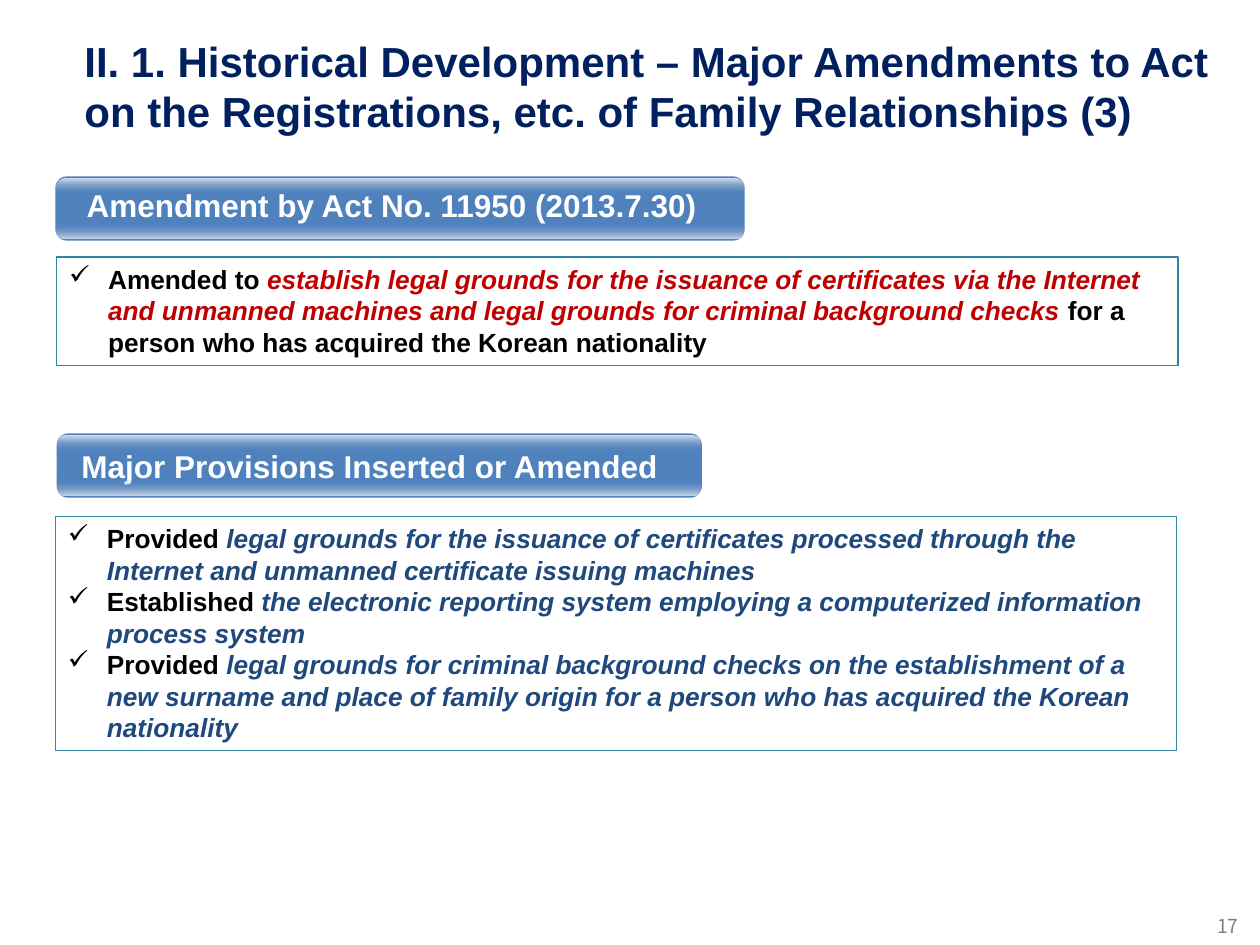
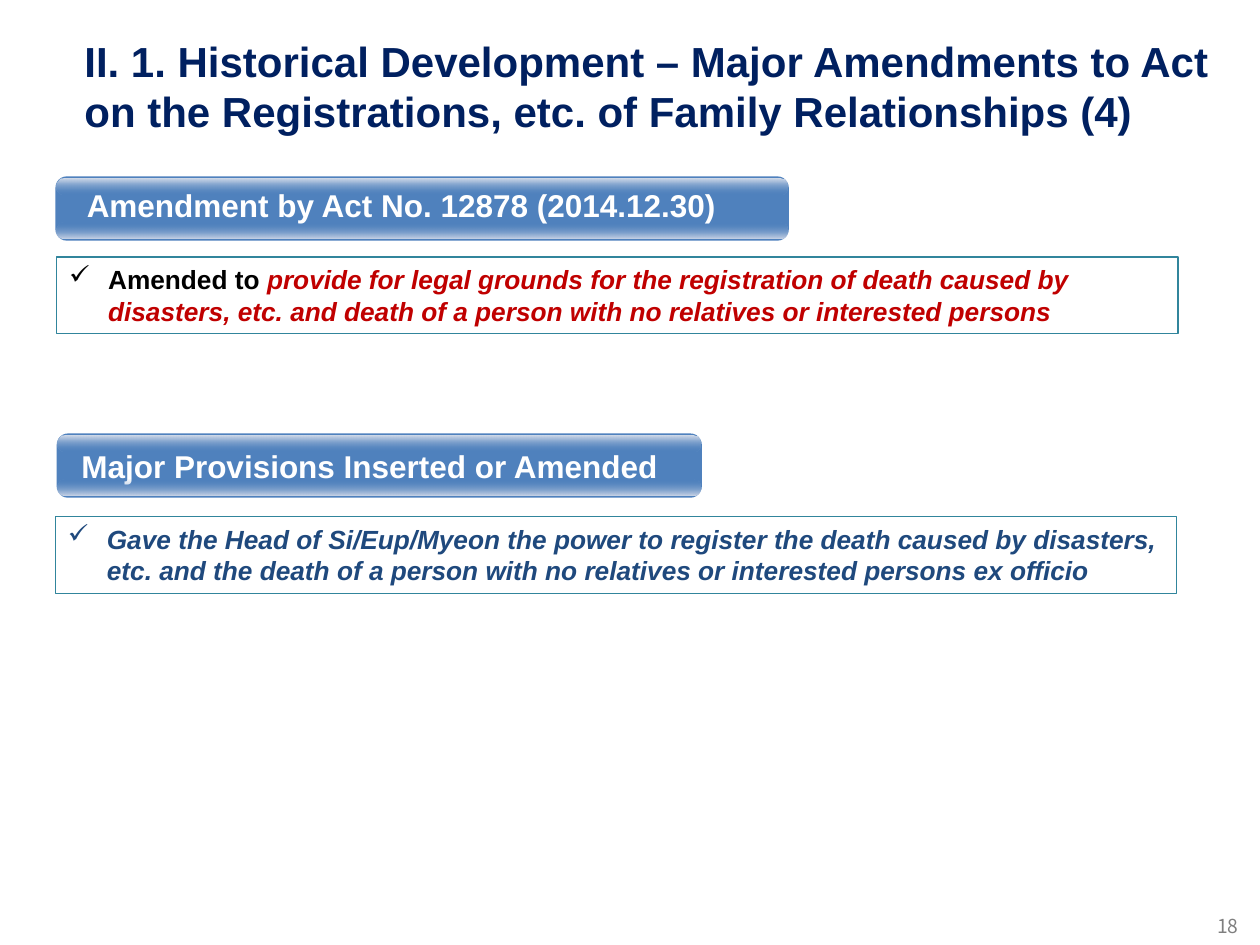
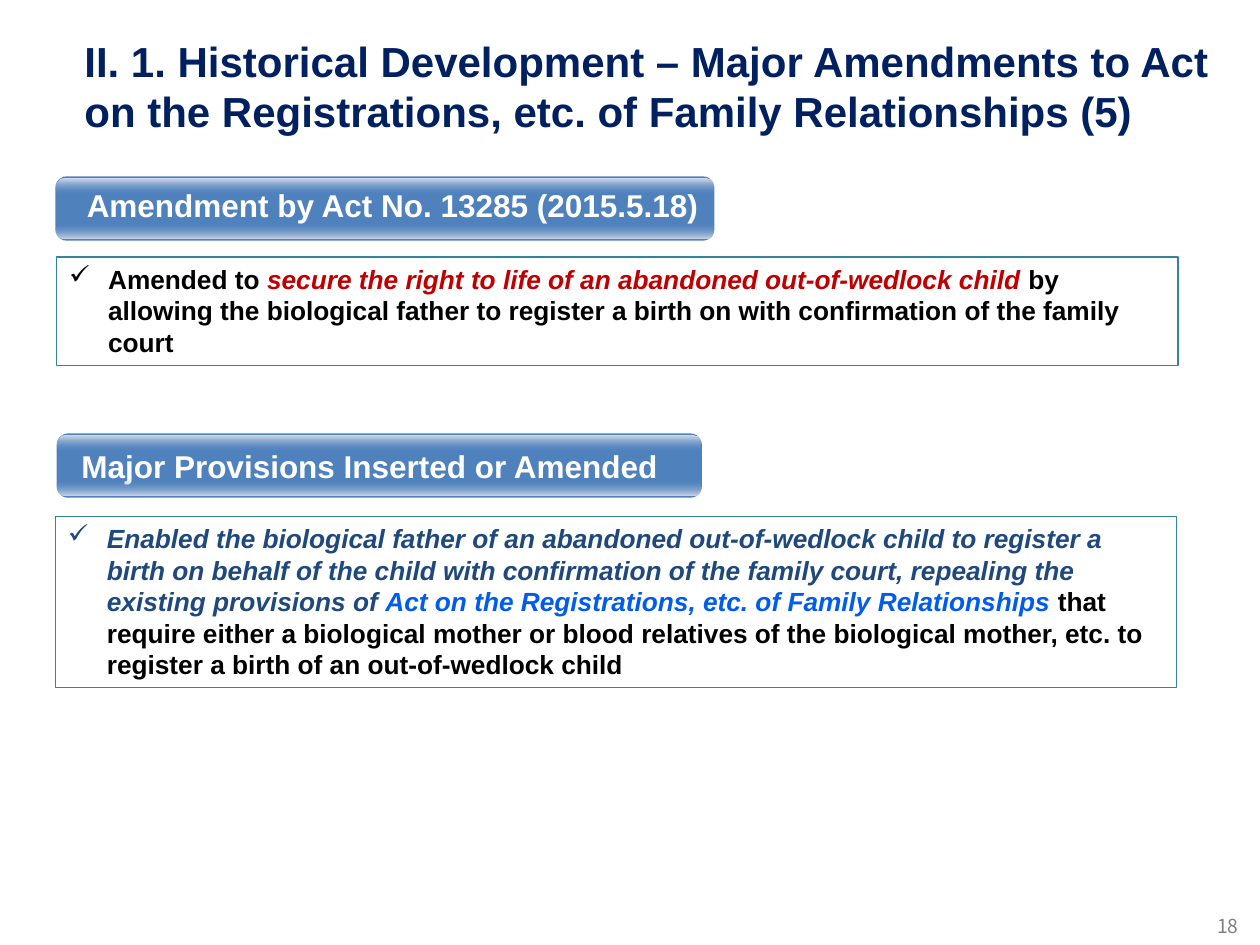
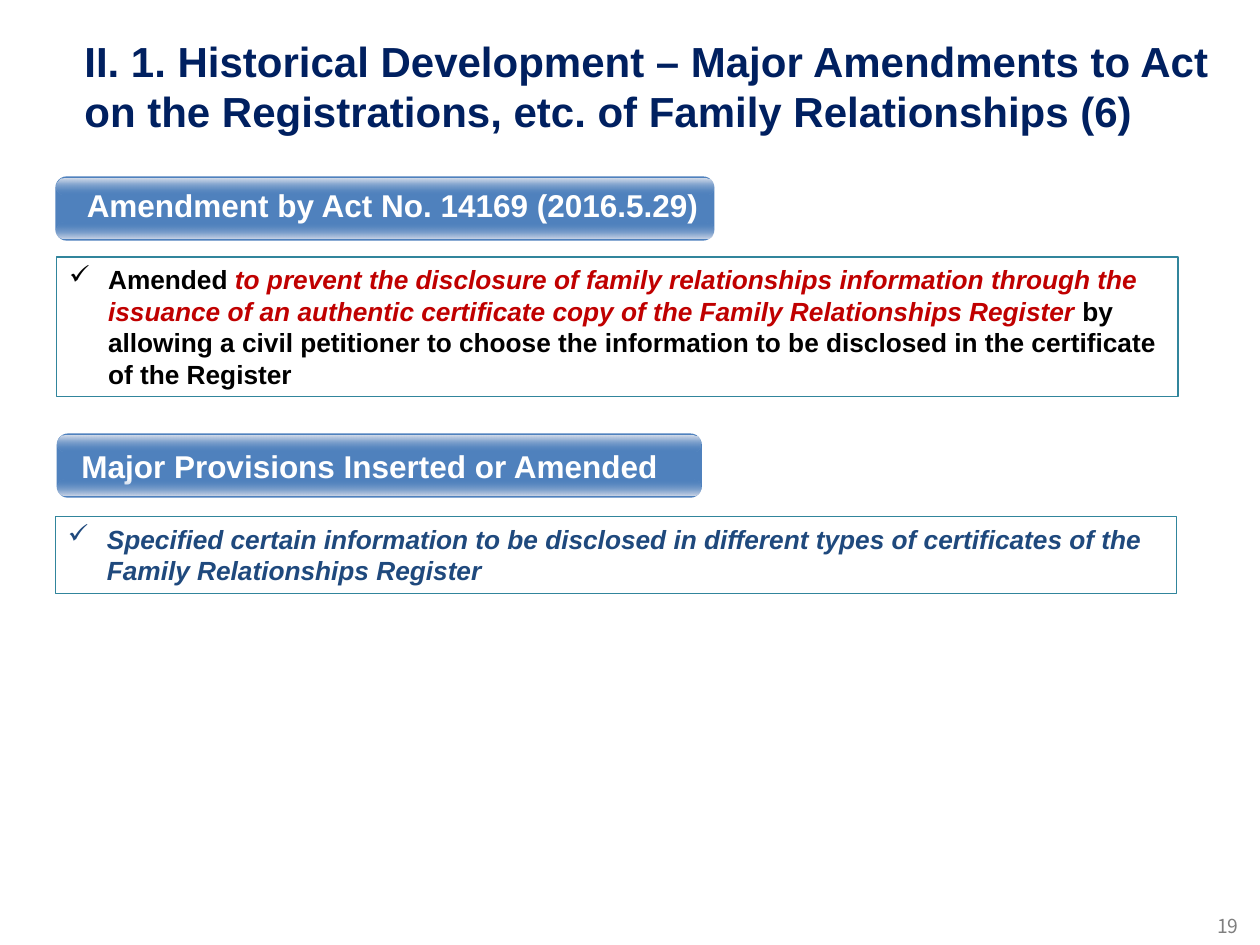
from dataclasses import dataclass
from typing import NamedTuple

from lxml import etree
from pptx import Presentation
from pptx.dml.color import RGBColor
from pptx.enum import shapes as es, text as et
from pptx.oxml import ns
from pptx.util import Pt

PX = 9144  # EMU in one px, 100 px to the inch


@dataclass(frozen=True)
class Theme:
    font: str = "Arial"
    numfont: str = "Noto Sans CJK KR"
    navy: str = "002060"
    ink: str = "000000"
    red: str = "C00000"
    blue: str = "1F497D"
    bright: str = "005BEE"
    white: str = "FFFFFF"
    grey: str = "7F7F7F"
    edge: str = "31859C"
    pill: str = "4F81BD"
    shine: str = "D7DEEB"
    glow: str = "D3DAE9"
    title: int = 24
    head: int = 18
    body: int = 15
    num: int = 11


T = Theme()


class Box(NamedTuple):
    left: int
    top: int
    width: int
    height: int

    def emu(self) -> list[int]:
        return [side * PX for side in self]


class Run(NamedTuple):
    text: str
    color: str = T.ink


Item = list[Run]


@dataclass(frozen=True)
class Page:
    order: int
    num: int
    act: str
    pill: int
    label: int
    rows: tuple[int, int]  # lines of text in the upper and lower box
    aim: Item
    rules: list[Item]


TITLE = ("II. 1. Historical Development – Major Amendments to Act on the "
         "Registrations, etc. of Family Relationships ({})")
RULES = "Major Provisions Inserted or Amended"
LINE, PAD = 25, 11  # height of a body line, and of the margins around all lines

PAGES = [
    Page(3, 17, "11950 (2013.7.30)", 547, 520, (3, 7),
         [Run("Amended to "),
          Run("establish legal grounds for the issuance of certificates via the "
              "Internet and unmanned machines and legal grounds for criminal "
              "background checks", T.red),
          Run(" for a person who has acquired the Korean nationality")],
         [[Run("Provided "),
           Run("legal grounds for the issuance of certificates processed through "
               "the Internet and unmanned certificate issuing machines", T.blue)],
          [Run("Established "),
           Run("the electronic reporting system employing a computerized "
               "information process system", T.blue)],
          [Run("Provided "),
           Run("legal grounds for criminal background checks on the establishment "
               "of a new surname and place of family origin for a person who has "
               "acquired the Korean nationality", T.blue)]]),
    Page(4, 18, "12878 (2014.12.30)", 582, 528, (2, 2),
         [Run("Amended to "),
          Run("provide for legal grounds for the registration of death caused by "
              "disasters, etc. and death of a person with no relatives or "
              "interested persons", T.red)],
         [[Run("Gave the Head of Si/Eup/Myeon the power to register the death "
               "caused by disasters, etc. and the death of a person with no "
               "relatives or interested persons ex officio", T.blue)]]),
    Page(5, 18, "13285 (2015.5.18)", 523, 508, (3, 5),
         [Run("Amended to "),
          Run("secure the right to life of an abandoned out-of-wedlock child", T.red),
          Run(" by allowing the biological father to register a birth on with "
              "confirmation of the family court")],
         [[Run("Enabled the biological father of an abandoned out-of-wedlock child "
               "to register a birth on behalf of the child with confirmation of "
               "the family court, repealing the existing provisions of ", T.blue),
           Run("Act on the Registrations, etc. of Family Relationships", T.bright),
           Run(" that require either a biological mother or blood relatives of the "
               "biological mother, etc. to register a birth of an out-of-wedlock "
               "child")]]),
    Page(6, 19, "14169 (2016.5.29)", 523, 508, (4, 2),
         [Run("Amended "),
          Run("to prevent the disclosure of family relationships information "
              "through the issuance of an authentic certificate copy of the Family "
              "Relationships Register", T.red),
          Run(" by allowing a civil petitioner to choose the information to be "
              "disclosed in the certificate of the Register")],
         [[Run("Specified certain information to be disclosed in different types "
               "of certificates of the Family Relationships Register", T.blue)]]),
]


def rgb(code: str) -> RGBColor:
    return RGBColor.from_string(code)


def write(frame, words: str, size: int, color: str, name: str = T.font,
          bold: bool = True, align=et.PP_ALIGN.LEFT) -> None:
    frame.text = words
    para = frame.paragraphs[0]
    para.alignment = align
    font = para.font
    font.name, font.size, font.bold = name, Pt(size), bold
    font.color.rgb = rgb(color)


def tick(para) -> None:
    """Give the paragraph a check mark and a hanging indent."""
    props = para._p.get_or_add_pPr()
    props.set("marL", str(31 * PX))
    props.set("indent", str(-31 * PX))
    etree.SubElement(props, ns.qn("a:buChar")).set("char", "✓")


def add_title(slide, order: int) -> None:
    title = slide.shapes.title
    title.left, title.top, title.width, title.height = Box(0, 0, 1000, 91).emu()
    frame = title.text_frame
    frame.word_wrap, frame.auto_size = True, et.MSO_AUTO_SIZE.NONE
    frame.vertical_anchor = et.MSO_ANCHOR.TOP
    frame.margin_left, frame.margin_top = 67 * PX, 28 * PX
    frame.margin_right = frame.margin_bottom = 0
    write(frame, TITLE.format(order), T.title, T.navy)


def add_list(slide, left: int, top: int, rows: int, items: list[Item]) -> None:
    box = Box(left, top, 890, rows * LINE + PAD)
    shape = slide.shapes.add_shape(es.MSO_SHAPE.RECTANGLE, *box.emu())
    shape.shadow.inherit = False
    shape.fill.background()
    shape.line.color.rgb, shape.line.width = rgb(T.edge), Pt(0.75)
    frame = shape.text_frame
    frame.word_wrap, frame.auto_size = True, et.MSO_AUTO_SIZE.SHAPE_TO_FIT_TEXT
    frame.vertical_anchor = et.MSO_ANCHOR.TOP
    for i, item in enumerate(items):
        para = frame.add_paragraph() if i else frame.paragraphs[0]
        para.alignment = et.PP_ALIGN.LEFT
        tick(para)
        font = para.font
        font.name, font.size, font.bold = T.font, Pt(T.body), True
        for piece in item:
            run = para.add_run()
            run.text = piece.text
            run.font.color.rgb = rgb(piece.color)
            run.font.italic = piece.color != T.ink


def add_round(group, box: Box, bend: float):
    shape = group.shapes.add_shape(es.MSO_SHAPE.ROUNDED_RECTANGLE, *box.emu())
    shape.adjustments[0] = bend
    shape.shadow.inherit = False
    shape.line.fill.background()
    return shape


def add_gloss(group, box: Box, colors: tuple[str, str]) -> None:
    """Draw a strip that fades, top to bottom, to or from a clear pill colour."""
    fill = add_round(group, box, 0.5).fill
    fill.gradient()
    fill.gradient_angle = 270
    for stop, color, at in zip(fill.gradient_stops, colors, (0, 1)):
        stop.color.rgb, stop.position = rgb(color), at
        if color == T.pill:
            tint = stop._gs.find(ns.qn("a:srgbClr"))
            etree.SubElement(tint, ns.qn("a:alpha")).set("val", "0")


def add_pill(slide, left: int, top: int, width: int):
    group = slide.shapes.add_group_shape()
    base = add_round(group, Box(left, top, width, 51), 0.175)
    base.fill.solid()
    base.fill.fore_color.rgb = rgb(T.pill)
    for drop, colors in ((37, (T.pill, T.glow)), (2, (T.shine, T.pill))):
        add_gloss(group, Box(left + 1, top + drop, width - 2, 12), colors)
    return base


def add_text(slide, box: Box):
    frame = slide.shapes.add_textbox(*box.emu()).text_frame
    frame.word_wrap, frame.auto_size = True, et.MSO_AUTO_SIZE.SHAPE_TO_FIT_TEXT
    return frame


def add_page(deck, page: Page) -> None:
    slide = deck.slides.add_slide(deck.slide_layouts[5])
    upper, lower = page.rows
    add_title(slide, page.order)

    add_list(slide, 45, 204, upper, [page.aim])
    add_pill(slide, 44, 140, page.pill)
    write(add_text(slide, Box(59, 143, page.label, 40)),
          f"Amendment by Act No. {page.act}", T.head, T.white)

    add_list(slide, 44, 410, lower, page.rules)
    frame = add_pill(slide, 45, 344, 512).text_frame
    frame.word_wrap, frame.margin_left = False, 17 * PX
    frame.vertical_anchor = et.MSO_ANCHOR.MIDDLE
    write(frame, RULES, T.head, T.white)

    write(add_text(slide, Box(949, 721, 51, 29)), str(page.num), T.num, T.grey,
          T.numfont, False, et.PP_ALIGN.CENTER)


def main() -> None:
    deck = Presentation()
    deck.slide_width, deck.slide_height = 1000 * PX, 750 * PX
    for page in PAGES:
        add_page(deck, page)
    deck.save("out.pptx")


if __name__ == "__main__":
    main()
